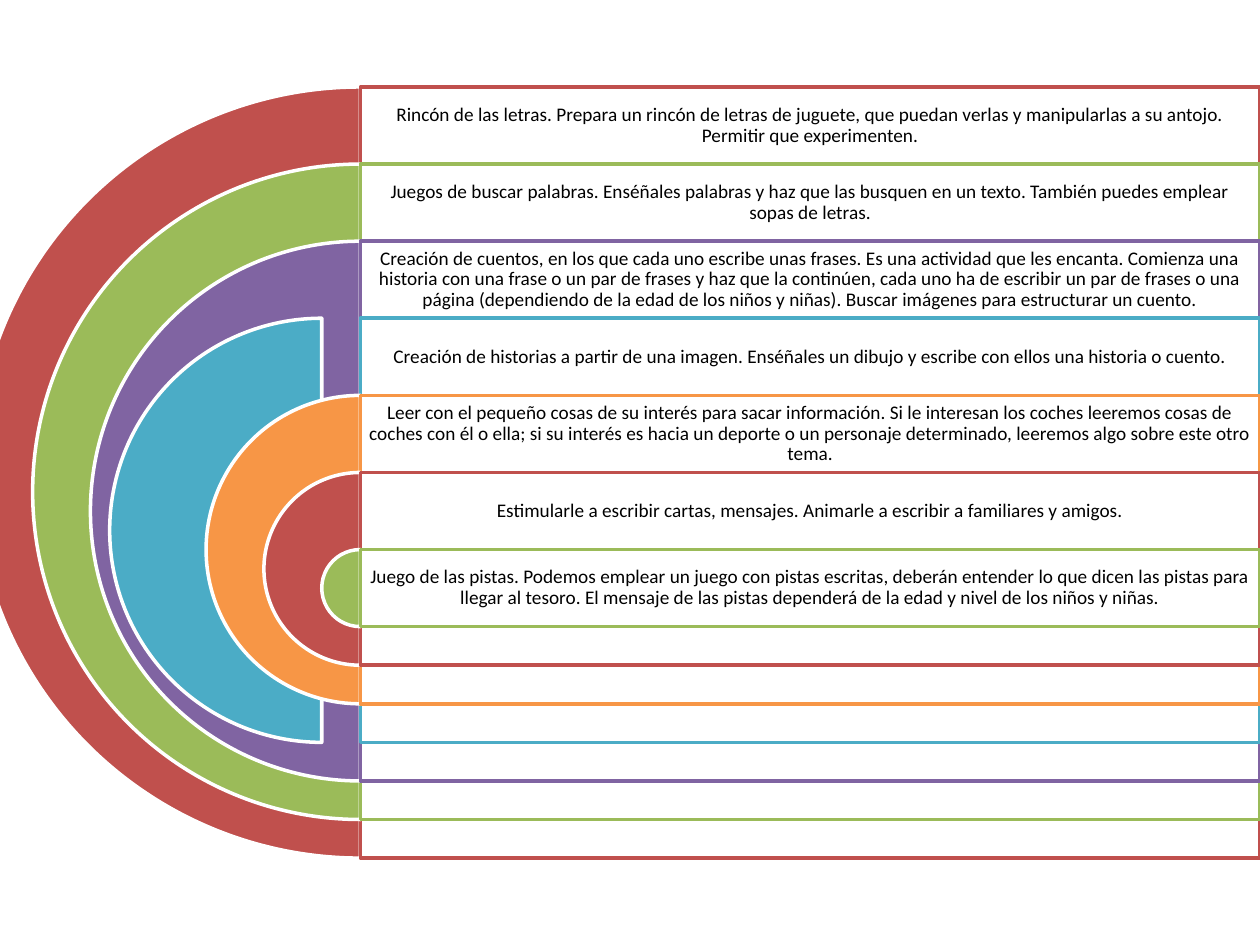
from dataclasses import dataclass

from lxml.etree import SubElement
from pptx import Presentation
from pptx.dml.color import RGBColor
from pptx.enum.shapes import MSO_SHAPE
from pptx.enum.text import MSO_ANCHOR, PP_ALIGN
from pptx.oxml.ns import qn
from pptx.util import Inches, Pt


@dataclass(frozen=True)
class Theme:
    red: str = "C0504D"
    green: str = "9BBB59"
    purple: str = "8064A2"
    teal: str = "4BACC6"
    orange: str = "F79646"
    white: str = "FFFFFF"
    black: str = "000000"
    font: str = "Calibri"
    text_size: float = 11
    line_width: float = 2
    panel_opacity: int = 90


THEME = Theme()

# Content: colour, text, and shift of the half disc in bands
ACTIVITIES = [
    (THEME.red, "Rincón de las letras. Prepara un rincón de letras de juguete, que puedan verlas "
     "y manipularlas a su antojo. Permitir que experimenten.", 0),
    (THEME.green, "Juegos de buscar palabras. Enséñales palabras y haz que las busquen en un texto. "
     "También puedes emplear sopas de letras.", 0),
    (THEME.purple, "Creación de cuentos, en los que cada uno escribe unas frases. Es una actividad que "
     "les encanta. Comienza una historia con una frase o un par de frases y haz que la continúen, "
     "cada uno ha de escribir un par de frases o una página (dependiendo de la edad de los niños y "
     "niñas). Buscar imágenes para estructurar un cuento.", 0),
    (THEME.teal, "Creación de historias a partir de una imagen. Enséñales un dibujo y escribe con ellos "
     "una historia o cuento.", -0.5),
    (THEME.orange, "Leer con el pequeño cosas de su interés para sacar información. Si le interesan los "
     "coches leeremos cosas de coches con él o ella; si su interés es hacia un deporte o un personaje "
     "determinado, leeremos algo sobre este otro tema.", 0),
    (THEME.red, "Estimularle a escribir cartas, mensajes. Animarle a escribir a familiares y amigos.", 0),
    (THEME.green, "Juego de las pistas. Podemos emplear un juego con pistas escritas, deberán entender lo "
     "que dicen las pistas para llegar al tesoro. El mensaje de las pistas dependerá de la edad y "
     "nivel de los niños y niñas.", 0),
]

# Grid: the outer disc is ten bands high; each inner one is 1.5 bands smaller
SLIDE_WIDTH, SLIDE_HEIGHT = 10, 7.5
OUTER_BANDS, BAND_STEP = 10, 1.5
TOP = 0.69
BAND = (SLIDE_HEIGHT - 2 * TOP) / OUTER_BANDS
AXIS = 2.86
PANEL_WIDTH = SLIDE_WIDTH - AXIS
INSET = 0.05


def add_filled_shape(slide, kind, box, fill, line):
    shape = slide.shapes.add_shape(kind, *map(Inches, box))
    shape.shadow.inherit = False
    shape.fill.solid()
    shape.fill.fore_color.rgb = RGBColor.from_string(fill)
    shape.line.color.rgb = RGBColor.from_string(line)
    shape.line.width = Pt(THEME.line_width)
    return shape


def add_half_disc(slide, center, top, diameter, color):
    box = (center - diameter / 2, top, diameter, diameter)
    disc = add_filled_shape(slide, MSO_SHAPE.PIE, box, color, THEME.white)
    disc.adjustments[0] = 54  # 90 degrees
    disc.adjustments[1] = 162  # 270 degrees


def add_panel(slide, top, height, color):
    box = (AXIS, top, PANEL_WIDTH, height)
    panel = add_filled_shape(slide, MSO_SHAPE.RECTANGLE, box, THEME.white, color)
    fill_color = panel._element.spPr.find(qn("a:solidFill"))[0]
    SubElement(fill_color, qn("a:alpha"), val=str(THEME.panel_opacity * 1000))


def add_description(slide, top, text):
    box = slide.shapes.add_textbox(*map(Inches, (AXIS, top, PANEL_WIDTH, BAND)))
    frame = box.text_frame
    frame.word_wrap = True
    frame.vertical_anchor = MSO_ANCHOR.MIDDLE
    frame.margin_left = frame.margin_right = Inches(INSET)
    frame.margin_top = frame.margin_bottom = Inches(INSET)
    frame.text = text
    paragraph = frame.paragraphs[0]
    paragraph.alignment = PP_ALIGN.CENTER
    paragraph.line_spacing = 0.9
    font = paragraph.runs[0].font
    font.name = THEME.font
    font.size = Pt(THEME.text_size)
    font.color.rgb = RGBColor.from_string(THEME.black)


def main():
    presentation = Presentation()
    presentation.slide_width = Inches(SLIDE_WIDTH)
    presentation.slide_height = Inches(SLIDE_HEIGHT)
    slide = presentation.slides.add_slide(presentation.slide_layouts[6])

    # Nested half discs with their panels, from the outside in
    for index, (color, text, shift) in enumerate(ACTIVITIES):
        top = TOP + index * BAND
        height = (OUTER_BANDS - index * BAND_STEP) * BAND
        add_half_disc(slide, AXIS + shift * BAND, top, height, color)
        add_panel(slide, top, height, color)
        add_description(slide, top, text)

    presentation.save("out.pptx")


if __name__ == "__main__":
    main()
